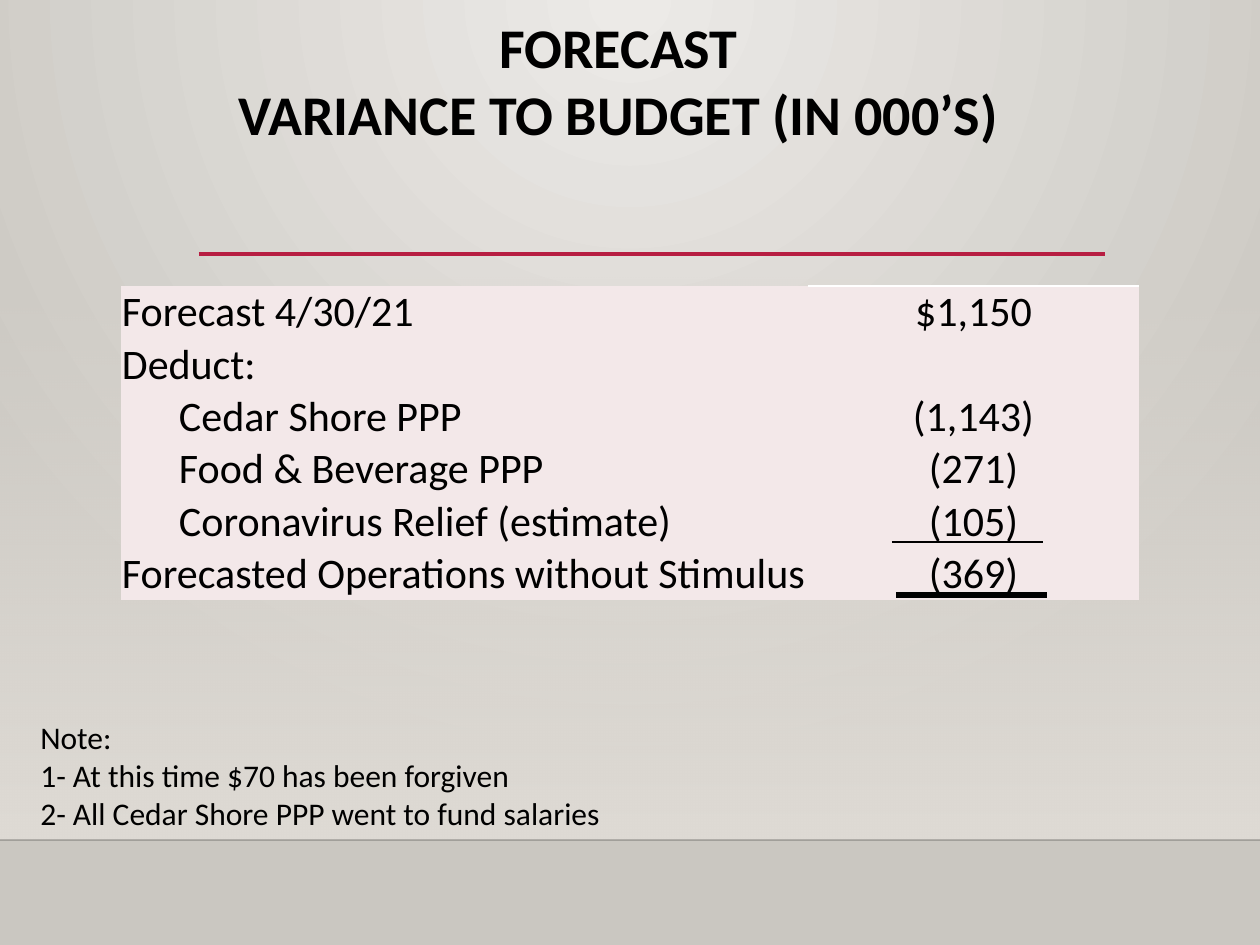
from dataclasses import dataclass

from lxml import etree
from pptx import Presentation
from pptx import util as u
from pptx.dml.color import RGBColor
from pptx.enum import shapes, text
from pptx.oxml import parse_xml
from pptx.oxml.ns import nsdecls, qn

PX_PER_INCH = 126
FONT = "Calibri"
NO_TABLE_STYLE = "{2D5ABB26-0587-4C30-8999-92F81FD0307C}"
COLORS = {
    "black": "000000",
    "white": "FFFFFF",
    "accent": "B71E42",
    "cell": "F3E8E9",
    "center": "ECEAE7",
    "edge": "CAC7C1",
    "wall": "DFDBD5",
}


@dataclass(frozen=True)
class Rule:
    left: int
    top: int
    width: int
    points: float
    color: str = "black"
    opacity: int = 100


@dataclass(frozen=True)
class BudgetRow:
    label: str
    amount: str = ""
    indent: int = 0


BACK_RULES = [
    Rule(0, 840, 1260, 1, opacity=20),
    Rule(199, 254, 906, 2.5, "accent"),
]
TOTAL_RULES = [Rule(896, 595, 151, 3), Rule(892, 542, 151, 1.25)]
ROWS = [
    BudgetRow("Forecast 4/30/21", "$1,150"),
    BudgetRow("Deduct:"),
    BudgetRow("Cedar Shore PPP", "(1,143)", 57),
    BudgetRow("Food & Beverage PPP", "(271)", 57),
    BudgetRow("Coronavirus Relief (estimate)", "(105)", 57),
    BudgetRow("Forecasted Operations without Stimulus", "(369)"),
]
NOTES = [
    "Note:",
    "1- At this time $70 has been forgiven",
    "2- All Cedar Shore PPP went to fund salaries",
]


def px(length: int) -> u.Emu:
    return u.Emu(round(length * 914400 / PX_PER_INCH))


def rgb(name: str) -> RGBColor:
    return RGBColor.from_string(COLORS[name])


def set_opacity(color_parent, percent: int) -> None:
    """Make the first RGB colour below an element partly transparent."""
    color = next(color_parent.iter(qn("a:srgbClr")))
    etree.SubElement(color, qn("a:alpha"), val=str(percent * 1000))


def set_gradient(fill, start: str, end: str) -> None:
    fill.gradient()
    for stop, name, position in zip(fill.gradient_stops, (start, end), (0, 1)):
        stop.color.rgb = rgb(name)
        stop.position = position


def format_text(frame, size: int, bold: bool = False, align=text.PP_ALIGN.LEFT) -> None:
    for paragraph in frame.paragraphs:
        paragraph.alignment = align
        for run in paragraph.runs:
            run.font.name = FONT
            run.font.size = u.Pt(size)
            run.font.bold = bold
            run.font.color.rgb = rgb("black")


def draw_rule(slide, rule: Rule) -> None:
    line = slide.shapes.add_connector(
        shapes.MSO_CONNECTOR.STRAIGHT, px(rule.left), px(rule.top),
        px(rule.left + rule.width), px(rule.top))
    line.line.width = u.Pt(rule.points)
    line.line.color.rgb = rgb(rule.color)
    properties = line._element.spPr
    if rule.opacity < 100:
        set_opacity(properties, rule.opacity)
    etree.SubElement(properties, qn("a:effectLst"))


def draw_backdrop(slide) -> None:
    set_gradient(slide.background.fill, "center", "edge")
    gradient = next(slide._element.iter(qn("a:gradFill")))
    gradient.replace(gradient.find(qn("a:lin")), parse_xml(
        f'<a:path {nsdecls("a")} path="circle">'
        '<a:fillToRect l="43000" t="0" r="43000" b="100000"/></a:path>'))

    wall = slide.shapes.add_shape(
        shapes.MSO_SHAPE.RECTANGLE, 0, px(277), px(1260), px(563))
    wall.shadow.inherit = False
    wall.line.fill.background()
    set_gradient(wall.fill, "wall", "wall")
    wall.fill.gradient_angle = 270
    set_opacity(wall._element.spPr, 0)


def draw_title(slide) -> None:
    title = slide.shapes.title
    title.left, title.top, title.width, title.height = px(102), px(6), px(1033), px(123)
    frame = title.text_frame
    frame.text = "FORECAST\vVARIANCE TO BUDGET (IN 000’S)"
    frame.auto_size = text.MSO_AUTO_SIZE.NONE
    frame.vertical_anchor = text.MSO_ANCHOR.TOP
    format_text(frame, 32, True, text.PP_ALIGN.CENTER)


def fill_cell(cell, content: str, align, indent: int = 0) -> None:
    cell.fill.solid()
    cell.fill.fore_color.rgb = rgb("cell")
    cell.vertical_anchor = text.MSO_ANCHOR.MIDDLE
    cell.margin_left = cell.margin_right = cell.margin_top = px(1)
    cell.margin_bottom = 0
    cell.text_frame.text = content
    format_text(cell.text_frame, 24, align=align)
    if indent:
        cell.text_frame.paragraphs[0]._p.get_or_add_pPr().set("marL", str(px(indent)))


def draw_budget_table(slide) -> None:
    row_height = 52
    frame = slide.shapes.add_table(
        len(ROWS), 2, px(121), px(286), px(1018), px(row_height * len(ROWS)))
    table = frame.table
    table.first_row = table.horz_banding = False
    next(table._tbl.iter(qn("a:tableStyleId"))).text = NO_TABLE_STYLE
    for column, width in zip(table.columns, (687, 331)):
        column.width = px(width)
    for index, row in enumerate(ROWS):
        fill_cell(table.cell(index, 0), row.label, text.PP_ALIGN.LEFT, row.indent)
        fill_cell(table.cell(index, 1), row.amount, text.PP_ALIGN.CENTER)
    table.cell(0, 1)._tc.get_or_add_tcPr().insert(0, parse_xml(
        f'<a:lnT {nsdecls("a")} w="12700"><a:solidFill>'
        f'<a:srgbClr val="{COLORS["white"]}"/></a:solidFill></a:lnT>'))


def draw_notes(slide) -> None:
    box = slide.shapes.add_textbox(px(28), px(712), px(1106), px(127))
    frame = box.text_frame
    frame.word_wrap = True
    frame.auto_size = text.MSO_AUTO_SIZE.SHAPE_TO_FIT_TEXT
    frame.text = "\n".join(NOTES)
    format_text(frame, 18)


def main() -> None:
    presentation = Presentation()
    presentation.slide_width, presentation.slide_height = px(1260), px(945)
    slide = presentation.slides.add_slide(presentation.slide_layouts[5])
    draw_backdrop(slide)
    for rule in BACK_RULES:
        draw_rule(slide, rule)
    draw_title(slide)
    draw_budget_table(slide)
    for rule in TOTAL_RULES:
        draw_rule(slide, rule)
    draw_notes(slide)
    presentation.save("out.pptx")


if __name__ == "__main__":
    main()
